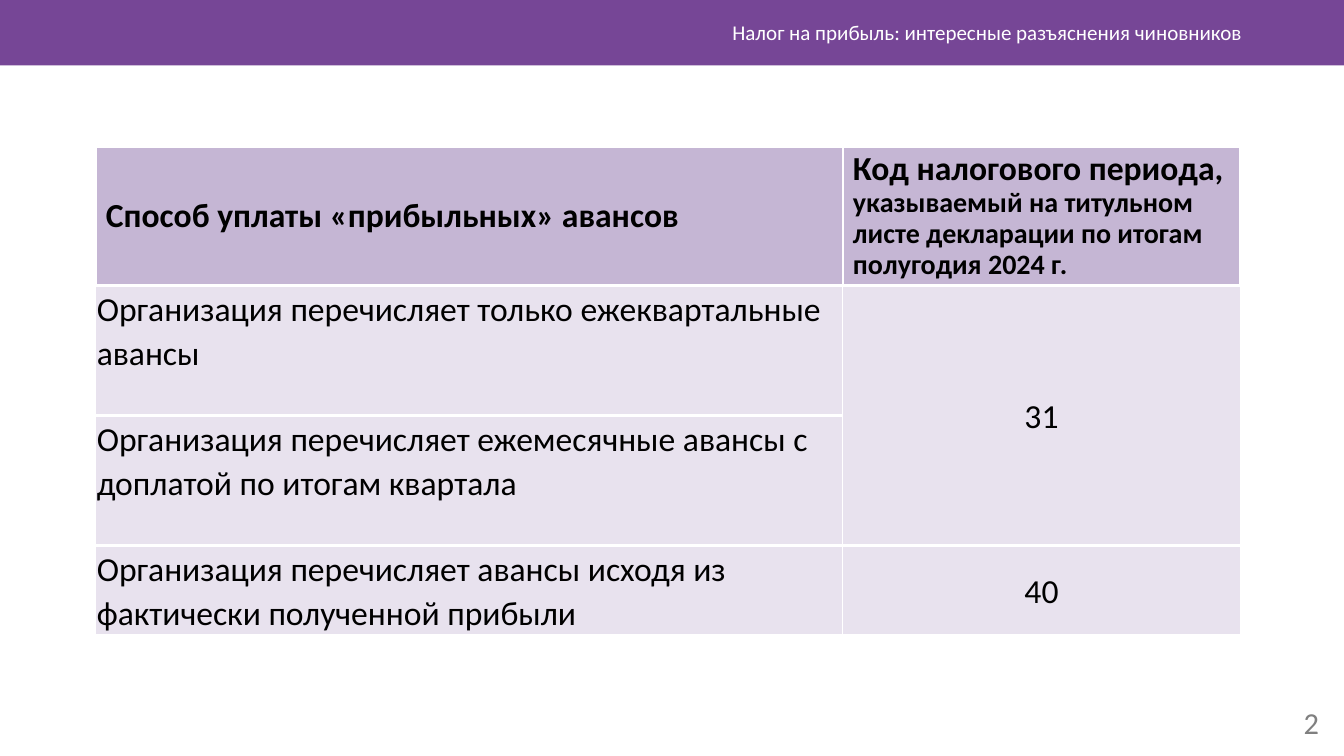
from lxml.etree import SubElement
from pptx import Presentation
from pptx.dml.color import RGBColor
from pptx.enum.shapes import MSO_SHAPE
from pptx.enum.text import MSO_ANCHOR, MSO_AUTO_SIZE, PP_ALIGN
from pptx.oxml.ns import qn
from pptx.util import Inches, Pt

FONT = "Calibri"
PURPLE = RGBColor(0x76, 0x46, 0x96)
LILAC = RGBColor(0x8D, 0x6F, 0xAB)
GRAY = RGBColor(0x80, 0x80, 0x80)
BLACK = RGBColor(0, 0, 0)
WHITE = RGBColor(255, 255, 255)

HEADER_OPACITY, BODY_OPACITY = 50, 20
THIN, THICK = 1, 2.25
COLUMN_WIDTHS = (7.41, 3.94)
ROW_HEIGHTS = (1.38, 1.29, 1.29, 0.87)
METHODS = (
    "Организация перечисляет только ежеквартальные авансы",
    "Организация перечисляет ежемесячные авансы с доплатой по итогам квартала",
    "Организация перечисляет авансы исходя из фактически полученной прибыли",
)


def style_font(font, size, color, bold=False):
    font.name = FONT
    font.size = Pt(size)
    font.bold = bold
    font.color.rgb = color


def add_band(page, width):
    """Lay the purple strip behind everything else on the page."""
    band = page.shapes.add_shape(MSO_SHAPE.RECTANGLE, 0, 0, width, Inches(0.65))
    band.shadow.inherit = False
    band.fill.solid()
    band.fill.fore_color.rgb = PURPLE
    band.line.fill.background()
    page.shapes._spTree.insert(2, band._element)


def fill_line(box, text, size, color):
    """Write one right-aligned line, centred vertically in the box."""
    frame = box.text_frame
    frame.text = text
    frame.word_wrap = True
    frame.auto_size = MSO_AUTO_SIZE.NONE
    frame.vertical_anchor = MSO_ANCHOR.MIDDLE
    para = frame.paragraphs[0]
    para.alignment = PP_ALIGN.RIGHT
    style_font(para.runs[0].font, size, color)


def place_title(page, text):
    title = page.shapes.title
    title.left, title.top = Inches(3.54), Inches(0.12)
    title.width, title.height = Inches(8.88), Inches(0.4)
    fill_line(title, text, 15, WHITE)


def add_page_number(page, number):
    box = page.shapes.add_textbox(Inches(12.51), Inches(6.97), Inches(0.67), Inches(0.4))
    fill_line(box, number, 21.7, GRAY)


def paint_cell(cell, opacity, side_width):
    """Give a cell white borders and a translucent lilac fill."""
    properties = cell._tc.get_or_add_tcPr()
    for side, width in zip("LRTB", (side_width, side_width, THICK, THICK)):
        line = SubElement(properties, qn(f"a:ln{side}"), w=str(Pt(width)))
        SubElement(SubElement(line, qn("a:solidFill")), qn("a:srgbClr"), val=str(WHITE))
    cell.fill.solid()
    cell.fill.fore_color.rgb = LILAC
    color = properties.find(qn("a:solidFill")).find(qn("a:srgbClr"))
    SubElement(color, qn("a:alpha"), val=str(opacity * 1000))


def write_header(cell, *parts):
    """Write bold (text, size) parts as one paragraph."""
    cell.vertical_anchor = MSO_ANCHOR.MIDDLE
    para = cell.text_frame.paragraphs[0]
    para.line_spacing = 0.9
    for text, size in parts:
        span = para.add_run()
        span.text = text
        style_font(span.font, size, BLACK, bold=True)


def write_body(cell, text, alignment, anchor):
    cell.margin_left = cell.margin_right = Inches(0.01)
    cell.margin_top = cell.margin_bottom = Inches(0.01)
    cell.vertical_anchor = anchor
    cell.text_frame.text = text
    para = cell.text_frame.paragraphs[0]
    para.alignment = alignment
    para.line_spacing = 1.07
    style_font(para.runs[0].font, 24, BLACK)


def add_code_table(page):
    frame = page.shapes.add_table(
        len(ROW_HEIGHTS), len(COLUMN_WIDTHS), Inches(0.95), Inches(1.45),
        Inches(sum(COLUMN_WIDTHS)), Inches(sum(ROW_HEIGHTS)))
    table = frame.table
    table.horz_banding = False
    for column, width in zip(table.columns, COLUMN_WIDTHS):
        column.width = Inches(width)
    for index, (row, height) in enumerate(zip(table.rows, ROW_HEIGHTS)):
        row.height = Inches(height)
        for cell in row.cells:
            if index == 0:
                paint_cell(cell, HEADER_OPACITY, THICK)
            else:
                paint_cell(cell, BODY_OPACITY, THIN)

    table.cell(1, 1).merge(table.cell(2, 1))
    write_header(table.cell(0, 0), ("Способ уплаты «прибыльных» авансов", 24))
    write_header(
        table.cell(0, 1),
        ("Код налогового периода, ", 24),
        ("указываемый на титульном листе декларации по итогам полугодия 2024 г.", 20))
    for index, method in enumerate(METHODS, start=1):
        write_body(table.cell(index, 0), method, PP_ALIGN.LEFT, MSO_ANCHOR.TOP)
    for index, code in ((1, "31"), (3, "40")):
        write_body(table.cell(index, 1), code, PP_ALIGN.CENTER, MSO_ANCHOR.MIDDLE)


def main():
    deck = Presentation()
    deck.slide_width, deck.slide_height = Inches(13.33), Inches(7.5)
    page = deck.slides.add_slide(deck.slide_layouts.get_by_name("Title Only"))
    add_band(page, deck.slide_width)
    place_title(page, "Налог на прибыль: интересные разъяснения чиновников")
    add_code_table(page)
    add_page_number(page, "2")
    deck.save("out.pptx")


if __name__ == "__main__":
    main()
